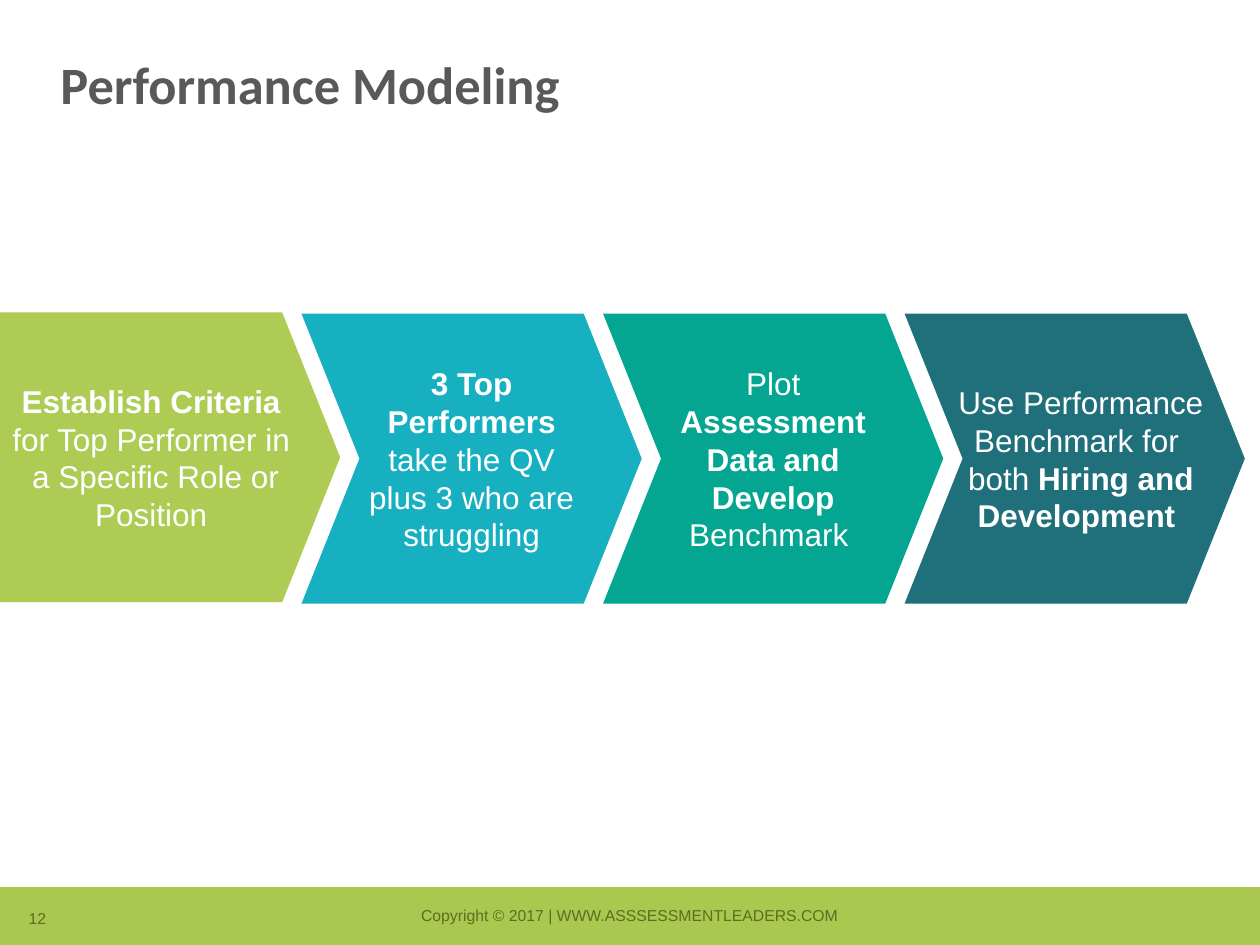
from pptx import Presentation
from pptx.dml.color import RGBColor
from pptx.enum.shapes import MSO_SHAPE
from pptx.enum.text import MSO_ANCHOR, PP_ALIGN
from pptx.util import Inches, Pt

RECT, CHEVRON, PENTAGON = MSO_SHAPE.RECTANGLE, MSO_SHAPE.CHEVRON, MSO_SHAPE.PENTAGON
TOP, MIDDLE, BOTTOM = MSO_ANCHOR.TOP, MSO_ANCHOR.MIDDLE, MSO_ANCHOR.BOTTOM
LEFT, CENTER = PP_ALIGN.LEFT, PP_ALIGN.CENTER

STEP_WIDTH, STEP_HEIGHT = 2.7, 2.3
STEP_PITCH = 7.18 / 3
# Each step: shape, top, fill, left inset, wrap, runs of (text, bold)
STEPS = [
    (PENTAGON, 2.48, "AECB54", 0, True,
     [("Establish Criteria \n", True),
      ("for Top Performer in \na Specific Role or Position ", False)]),
    (CHEVRON, 2.49, "17B0C1", 0, True,
     [("3 Top Performers ", True),
      ("take the QV plus 3 who are struggling", False)]),
    (CHEVRON, 2.49, "04A692", 0, True,
     [("Plot ", False), ("Assessment Data and Develop ", True),
      ("Benchmark ", False)]),
    (CHEVRON, 2.49, "1F707A", 0.1, False,
     [("Use Performance\nBenchmark for \nboth ", False),
      ("Hiring and\nDevelopment ", True)]),
]


def rgb(value):
    return RGBColor.from_string(value)


class SlideBuilder:
    font, bar, footer_color = "Arial", "AAC750", "5B6E21"

    def __init__(self, slide):
        self.s = slide

    def style(self, p, size, color, font=None, align=LEFT):
        p.alignment = align
        p.font.name = font or self.font
        p.font.size = Pt(size)
        p.font.color.rgb = rgb(color)

    def title(self, text, x, y, w, h):
        sp = self.s.shapes.title
        sp.left, sp.top, sp.width, sp.height = map(Inches, (x, y, w, h))
        tf = sp.text_frame
        tf.text = text
        tf.vertical_anchor = TOP
        p = tf.paragraphs[0]
        p.line_spacing = 0.9
        self.style(p, 30, "595959", "Calibri")
        p.font.bold = True

    def shape(self, kind, x, y, w, h, fill):
        sp = self.s.shapes.add_shape(kind, *map(Inches, (x, y, w, h)))
        sp.shadow.inherit = False
        sp.fill.solid()
        sp.fill.fore_color.rgb = rgb(fill)
        sp.line.fill.background()
        return sp

    def step(self, index, kind, top, fill, inset, wrap, runs):
        sp = self.shape(kind, index * STEP_PITCH, top, STEP_WIDTH, STEP_HEIGHT, fill)
        sp.adjustments[0] = 0.2
        tf = sp.text_frame
        tf.word_wrap = wrap
        tf.vertical_anchor = MIDDLE
        tf.margin_left, tf.margin_right = Inches(inset), 0
        tf.margin_top = tf.margin_bottom = Inches(0.16)
        p = tf.paragraphs[0]
        self.style(p, 18, "FFFFFF", align=CENTER)
        for text, bold in runs:
            for n, line in enumerate(text.split("\n")):
                if n:
                    p.add_line_break()
                if line:
                    r = p.add_run()
                    r.text, r.font.bold = line, bold

    def footer(self, text, x, y, w, h, align=LEFT):
        tf = self.s.shapes.add_textbox(*map(Inches, (x, y, w, h))).text_frame
        tf.word_wrap = False
        tf.vertical_anchor = BOTTOM
        tf.text = text
        self.style(tf.paragraphs[0], 9, self.footer_color, align=align)


def main():
    prs = Presentation()
    prs.slide_width, prs.slide_height = Inches(10), Inches(7.5)
    b = SlideBuilder(prs.slides.add_slide(prs.slide_layouts[5]))
    b.shape(RECT, 0, 7.04, 10, 0.46, b.bar)
    b.footer("Copyright © 2017 | WWW.ASSSESSMENTLEADERS.COM", 3.17, 7.14, 3.65, 0.25, CENTER)
    b.footer("12", 0.13, 7.16, 0.36, 0.25)
    b.title("Performance Modeling", 0.38, 0.42, 9.25, 0.83)
    # Later steps lie behind earlier ones
    for index, step in reversed(list(enumerate(STEPS))):
        b.step(index, *step)
    prs.save("out.pptx")


if __name__ == "__main__":
    main()
